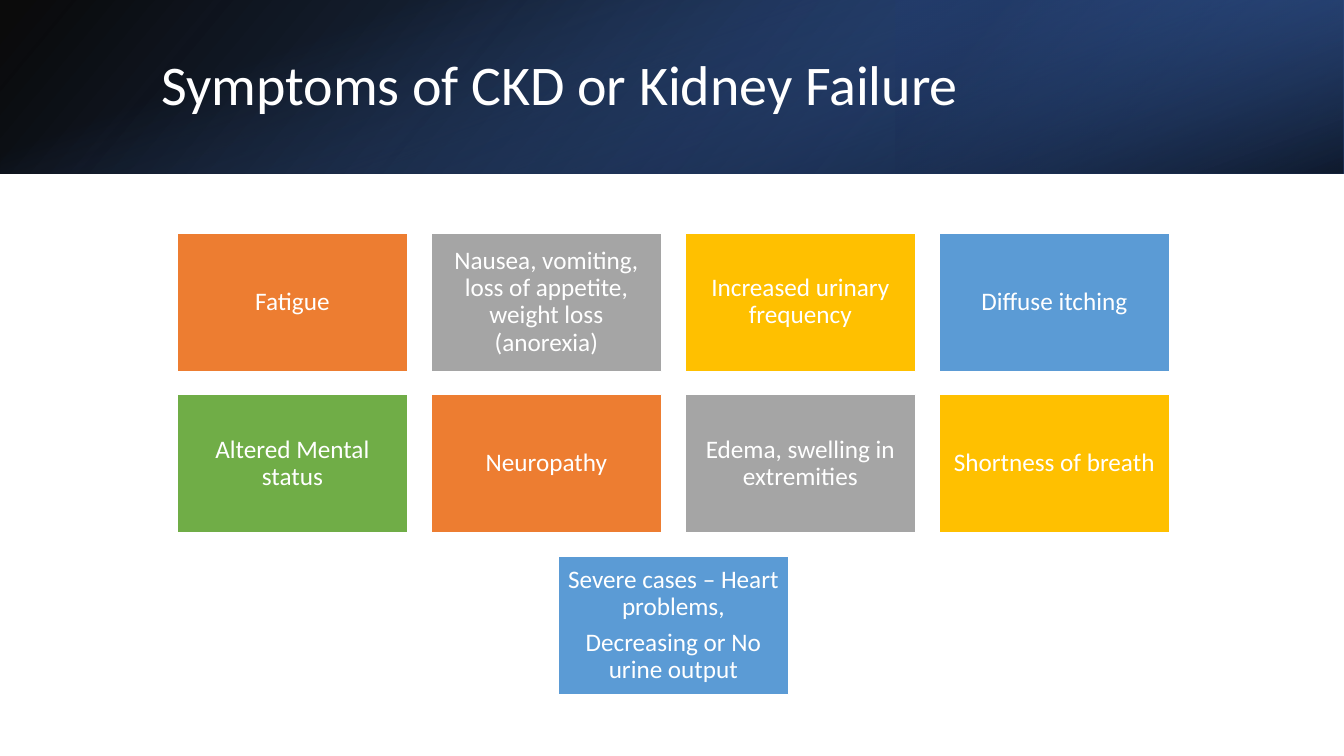
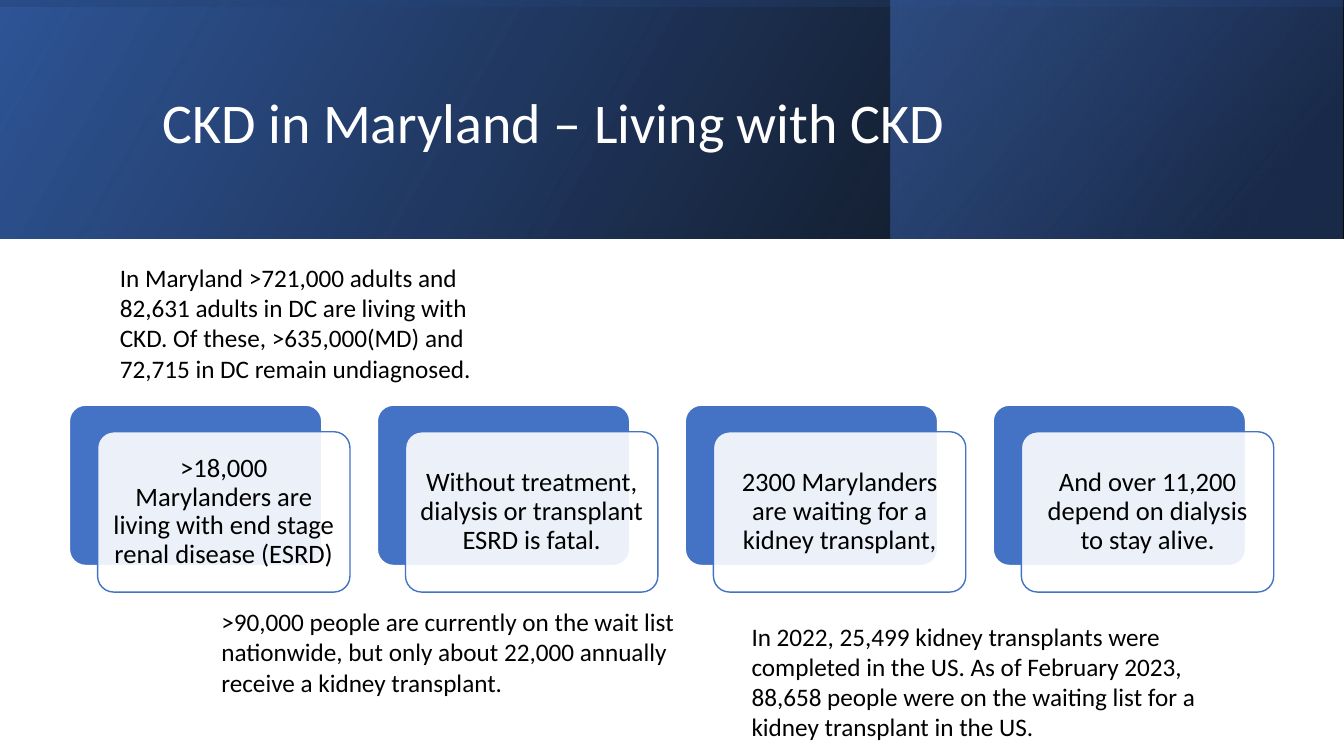
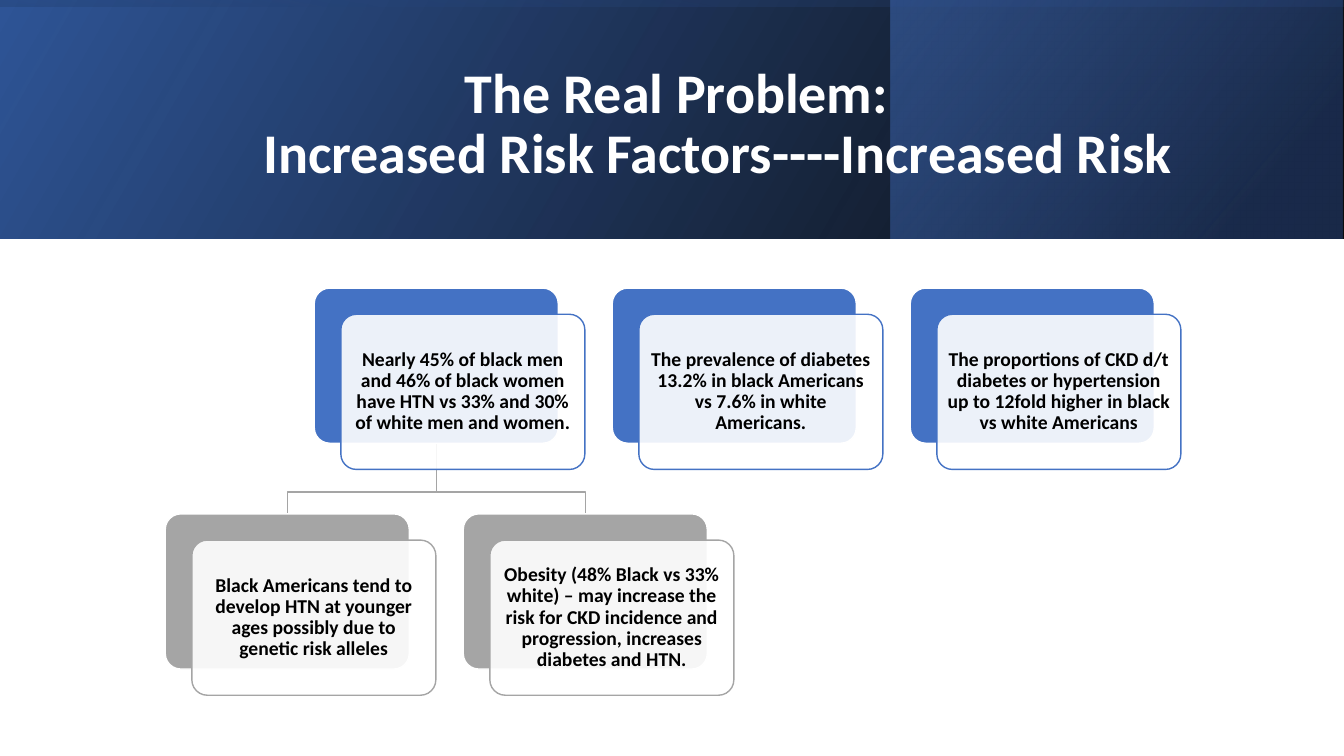
from dataclasses import dataclass

import lxml.etree
import pptx
import pptx.dml.color
import pptx.enum.shapes
import pptx.enum.text
import pptx.oxml.ns
import pptx.presentation
import pptx.shapes.autoshape
import pptx.slide
import pptx.text.text
import pptx.util
from pptx.util import Cm, Pt

FONT = "Calibri"
WHITE, BLACK = "FFFFFF", "000000"
BLUE, NAVY, DARK_BLUE, GRAY = "4472C4", "203864", "2F5597", "A5A5A5"
ORANGE, GOLD, SKY, GREEN = "ED7D31", "FFC000", "5B9BD5", "70AD47"
PAGE_WIDTH, PAGE_HEIGHT = 33.87, 19.05
SHAPES = pptx.enum.shapes.MSO_SHAPE
ALIGN = pptx.enum.text.PP_ALIGN
MIDDLE = pptx.enum.text.MSO_ANCHOR.MIDDLE


@dataclass(frozen=True)
class Area:
    """A rectangle in centimetres."""
    left: float
    top: float
    width: float
    height: float

    def lengths(self) -> tuple[int, int, int, int]:
        return Cm(self.left), Cm(self.top), Cm(self.width), Cm(self.height)


@dataclass(frozen=True)
class Stop:
    """A gradient stop; position and opacity are percentages."""
    position: int
    colour: str
    opacity: int = 100


@dataclass(frozen=True)
class Layer:
    """One gradient rectangle of a header band; angle runs clockwise."""
    area: Area
    stops: tuple[Stop, Stop]
    angle: int
    rotation: int = 0
    flipped: bool = True


@dataclass(frozen=True)
class CardStyle:
    width: float
    height: float
    shift_x: float
    shift_y: float
    size: int
    bold: bool = False


@dataclass(frozen=True)
class Card:
    left: float
    top: float
    colour: str
    text: str


@dataclass(frozen=True)
class Note:
    area: Area
    text: str


def upright(height: float) -> Area:
    """Area that covers the full-width band once turned by a quarter."""
    offset = (PAGE_WIDTH - height) / 2
    return Area(offset, -offset, height, PAGE_WIDTH)


LOW_BAND, TALL_BAND = 4.37, 6.02
BASE_STOPS = (Stop(0, BLACK, 96), Stop(100, DARK_BLUE))
LOW_HEADER = (
    Layer(Area(0, 0, PAGE_WIDTH, LOW_BAND), BASE_STOPS, 140),
    Layer(Area(22.58, 0, 11.28, LOW_BAND),
          (Stop(19, NAVY, 68), Stop(100, BLUE, 79)), 320, 180),
    Layer(upright(LOW_BAND), (Stop(23, BLUE, 0), Stop(99, BLACK, 74)), 340, 90, False),
)
TALL_HEADER = (
    Layer(Area(0, 0, PAGE_WIDTH, TALL_BAND), BASE_STOPS, 330),
    Layer(Area(22.45, 0, 11.38, TALL_BAND),
          (Stop(19, NAVY, 68), Stop(100, BLUE, 48)), 320),
    Layer(upright(TALL_BAND), (Stop(23, DARK_BLUE, 16), Stop(99, BLACK, 45)), 350, 270),
)
LOW_TITLE = Area(3.81, 0.97, 27.89, 2.44)
TALL_TITLE = Area(3.84, 0.97, 27, 4.37)

SYMPTOMS = (
    (ORANGE, ("Fatigue",)),
    (GRAY, ("Nausea, vomiting, loss of appetite, weight loss (anorexia)",)),
    (GOLD, ("Increased urinary frequency",)),
    (SKY, ("Diffuse itching",)),
    (GREEN, ("Altered Mental status",)),
    (ORANGE, ("Neuropathy",)),
    (GRAY, ("Edema, swelling in extremities",)),
    (GOLD, ("Shortness of breath",)),
    (SKY, ("Severe cases – Heart problems,", "Decreasing or No urine output")),
)
MARYLAND_FACTS = (
    ">18,000 Marylanders are living with end stage renal disease (ESRD)",
    "Without treatment, dialysis or transplant ESRD is fatal.",
    "2300 Marylanders are waiting for a kidney transplant,",
    "And over 11,200 depend on dialysis to stay alive.",
)
MARYLAND_NOTES = (
    Note(Area(5.33, 15.16, 12.67, 2.57),
         ">90,000 people are currently on the wait list nationwide, but only about "
         "22,000 annually receive a kidney transplant."),
    Note(Area(2.77, 6.48, 9.96, 3.33),
         "In Maryland >721,000 adults and 82,631 adults in DC are living with CKD. "
         "Of these, >635,000(MD) and 72,715 in DC remain undiagnosed."),
    Note(Area(18.69, 15.52, 12.14, 3.33),
         "In 2022, 25,499 kidney transplants were completed in the US. As of February "
         "2023, 88,658 people were on the waiting list for a kidney transplant in the US."),
)
RISKS = (
    "Nearly 45% of black men and 46% of black women have HTN vs 33% and 30% of white "
    "men and women.",
    "The prevalence of diabetes 13.2% in black Americans vs 7.6% in white Americans.",
    "The proportions of CKD d/t diabetes or hypertension up to 12fold higher in black "
    "vs white Americans",
)
RISK_CAUSES = (
    "Black Americans tend to develop HTN at younger ages possibly due to genetic risk alleles",
    "Obesity (48% Black vs 33% white) – may increase the risk for CKD incidence and "
    "progression, increases diabetes and HTN.",
)


def rgb(colour: str) -> pptx.dml.color.RGBColor:
    return pptx.dml.color.RGBColor.from_string(colour)


def set_opacity(shape: pptx.shapes.autoshape.Shape, opacities: tuple[int, ...]) -> None:
    """Give the fill colours of a shape their opacity, in order."""
    colours = list(shape._element.spPr.iter(pptx.oxml.ns.qn("a:srgbClr")))
    for colour, opacity in zip(colours, opacities):
        if opacity < 100:
            lxml.etree.SubElement(colour, pptx.oxml.ns.qn("a:alpha"),
                                  val=str(opacity * 1000))


def add_span(para: pptx.text.text._Paragraph, text: str, size: int, colour: str,
             bold: bool = False) -> None:
    span = para.add_run()
    span.text = text
    span.font.name = FONT
    span.font.size = Pt(size)
    span.font.bold = bold
    span.font.color.rgb = rgb(colour)


def add_layer(page: pptx.slide.Slide, layer: Layer) -> None:
    shape = page.shapes.add_shape(SHAPES.RECTANGLE, *layer.area.lengths())
    shape.shadow.inherit = False
    shape.rotation = layer.rotation
    if layer.flipped:
        shape._element.spPr.xfrm.set("flipH", "1")
    shape.line.fill.background()
    shape.fill.gradient()
    shape.fill.gradient_angle = 360 - layer.angle
    for target, stop in zip(shape.fill.gradient_stops, layer.stops):
        target.position = stop.position / 100
        target.color.rgb = rgb(stop.colour)
    set_opacity(shape, tuple(stop.opacity for stop in layer.stops))


def add_page(deck: pptx.presentation.Presentation, header: tuple[Layer, ...],
             title_area: Area, title_lines: tuple[str, ...], bold: bool = False,
             indents: tuple[float, float] = (0, 0)) -> pptx.slide.Slide:
    """Add a page with header and title; indents are of the first and later lines."""
    page = deck.slides.add_slide(deck.slide_layouts[5])
    title = page.shapes.title
    for layer in header:
        add_layer(page, layer)
    page.shapes._spTree.append(title._element)
    title.left, title.top, title.width, title.height = title_area.lengths()
    frame = title.text_frame
    frame.auto_size = pptx.enum.text.MSO_AUTO_SIZE.NONE
    frame.vertical_anchor = MIDDLE
    para = frame.paragraphs[0]
    para.alignment = ALIGN.LEFT
    para.line_spacing = 0.9
    first, later = indents
    properties = para._p.get_or_add_pPr()
    properties.set("marL", str(Cm(later)))
    properties.set("indent", str(Cm(first - later)))
    for index, line in enumerate(title_lines):
        if index:
            para.add_line_break()
        add_span(para, line, 40, WHITE, bold)
    return page


def add_box(page: pptx.slide.Slide, area: Area, fill: str, line: str,
            rounded: bool = False) -> pptx.shapes.autoshape.Shape:
    kind = SHAPES.ROUNDED_RECTANGLE if rounded else SHAPES.RECTANGLE
    box = page.shapes.add_shape(kind, *area.lengths())
    if rounded:
        box.adjustments[0] = 0.1
    box.shadow.inherit = False
    box.fill.solid()
    box.fill.fore_color.rgb = rgb(fill)
    box.line.color.rgb = rgb(line)
    box.line.width = Pt(1)
    return box


def write_centred(box: pptx.shapes.autoshape.Shape, lines: tuple[str, ...], size: int,
                  colour: str, bold: bool = False) -> None:
    frame = box.text_frame
    frame.word_wrap = True
    frame.vertical_anchor = MIDDLE
    inset = Pt(size * 0.3)
    frame.margin_left = frame.margin_right = inset
    frame.margin_top = frame.margin_bottom = inset
    for index, line in enumerate(lines):
        para = frame.add_paragraph() if index else frame.paragraphs[0]
        para.alignment = ALIGN.CENTER
        para.line_spacing = 0.9
        para.space_after = Pt(size * 0.35)
        add_span(para, line, size, colour, bold)


def add_card(page: pptx.slide.Slide, card: Card, style: CardStyle) -> None:
    """Draw a coloured plate with a translucent text plate shifted over it."""
    add_box(page, Area(card.left, card.top, style.width, style.height),
            card.colour, WHITE, rounded=True)
    front = add_box(page, Area(card.left + style.shift_x, card.top + style.shift_y,
                               style.width, style.height),
                    WHITE, card.colour, rounded=True)
    set_opacity(front, (90,))
    write_centred(front, (card.text,), style.size, BLACK, style.bold)


def add_note(page: pptx.slide.Slide, note: Note) -> None:
    box = page.shapes.add_textbox(*note.area.lengths())
    box.text_frame.word_wrap = True
    add_span(box.text_frame.paragraphs[0], note.text, 18, BLACK)


def add_branch(page: pptx.slide.Slide, parent: Card, child: Card, style: CardStyle) -> None:
    """Draw the bent line from a parent's bottom to a child's top."""
    start_x = Cm(parent.left + style.width / 2)
    start_y = Cm(parent.top + style.height)
    end_x = Cm(child.left + style.width / 2)
    bend_y = Cm(child.top - 0.55)
    builder = page.shapes.build_freeform(start_x, start_y)
    builder.add_line_segments(
        [(start_x, bend_y), (end_x, bend_y), (end_x, Cm(child.top))], close=False)
    branch = builder.convert_to_shape()
    branch.shadow.inherit = False
    branch.fill.background()
    branch.line.color.rgb = rgb(GRAY)
    branch.line.width = Pt(1)


def build_symptoms(deck: pptx.presentation.Presentation) -> None:
    page = add_page(deck, LOW_HEADER, LOW_TITLE, ("Symptoms of CKD or Kidney Failure",))
    left, top, width, height, gap, columns = 4.46, 5.87, 5.82, 3.49, 0.58, 4
    for index, (colour, lines) in enumerate(SYMPTOMS):
        row, column = divmod(index, columns)
        in_row = min(columns, len(SYMPTOMS) - row * columns)
        position = column + (columns - in_row) / 2
        area = Area(left + position * (width + gap), top + row * (height + gap),
                    width, height)
        write_centred(add_box(page, area, colour, WHITE), lines, 18, WHITE)


def build_maryland(deck: pptx.presentation.Presentation) -> None:
    page = add_page(deck, TALL_HEADER, TALL_TITLE, ("CKD in Maryland – Living with CKD",))
    style = CardStyle(6.36, 4.04, 0.71, 0.67, 19)
    for index, fact in enumerate(MARYLAND_FACTS):
        add_card(page, Card(1.75 + index * 7.76, 10.21, BLUE, fact), style)
    for note in MARYLAND_NOTES:
        add_note(page, note)


def build_risks(deck: pptx.presentation.Presentation) -> None:
    page = add_page(deck, TALL_HEADER, TALL_TITLE,
                    ("The Real Problem:", "Increased Risk Factors----Increased Risk"),
                    bold=True, indents=(7.62, 2.54))
    style = CardStyle(6.15, 3.91, 0.67, 0.66, 14, bold=True)
    left, step = 7.92, 7.51
    risks = [Card(left + index * step, 7.26, BLUE, text)
             for index, text in enumerate(RISKS)]
    causes = [Card(left + (index - 0.5) * step, 12.95, GRAY, text)
              for index, text in enumerate(RISK_CAUSES)]
    for cause in causes:
        add_branch(page, risks[0], cause, style)
    for card in risks + causes:
        add_card(page, card, style)


def main() -> None:
    deck = pptx.Presentation()
    deck.slide_width, deck.slide_height = Cm(PAGE_WIDTH), Cm(PAGE_HEIGHT)
    build_symptoms(deck)
    build_maryland(deck)
    build_risks(deck)
    deck.save("out.pptx")


if __name__ == "__main__":
    main()
